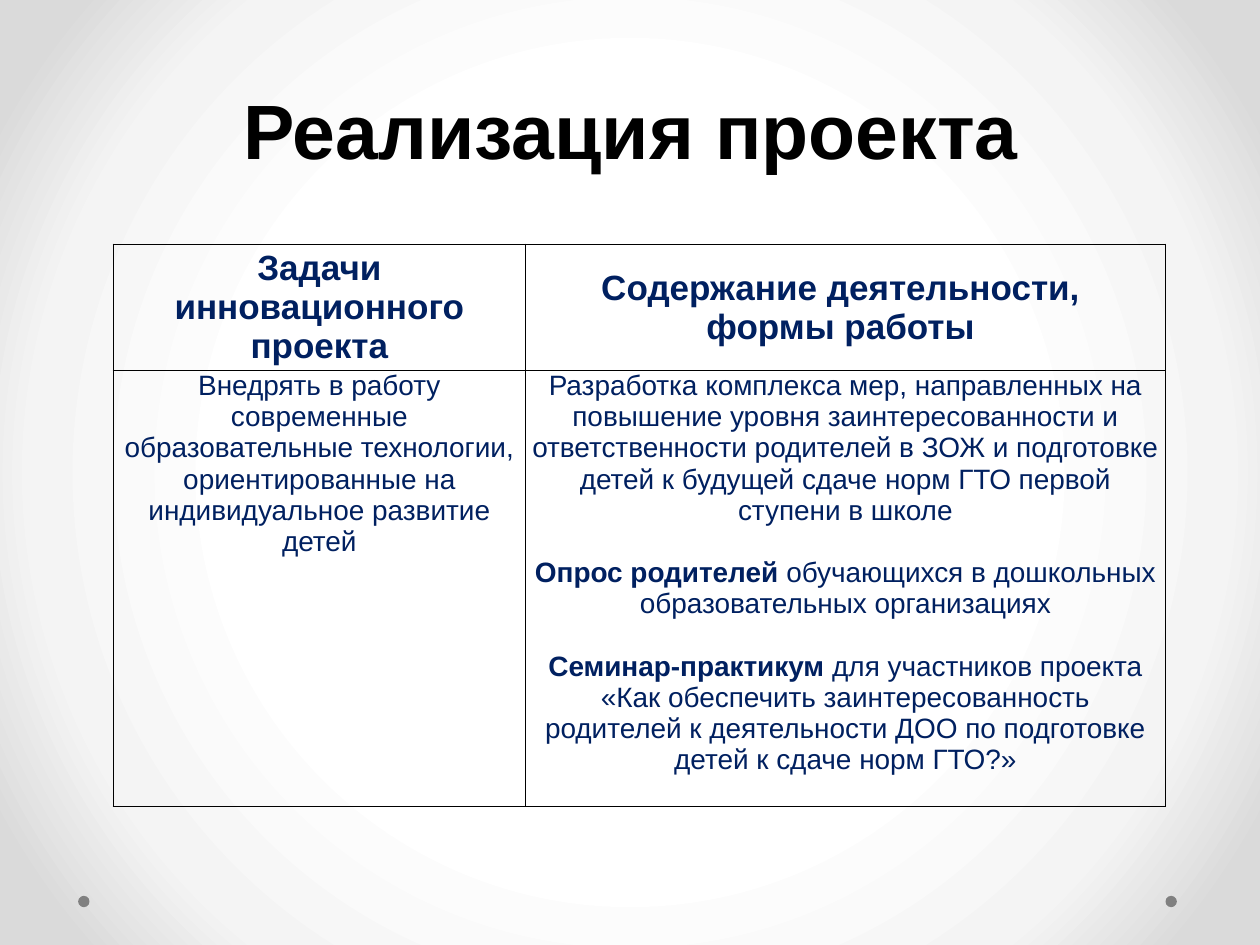
from lxml import etree
from pptx import Presentation
from pptx.dml.color import RGBColor
from pptx.enum import shapes, text
from pptx.oxml import parse_xml
from pptx.oxml.ns import nsdecls, qn
from pptx.util import Inches, Pt

BLACK = RGBColor(0x00, 0x00, 0x00)
NAVY = RGBColor(0x00, 0x20, 0x60)
GREY = RGBColor(0x80, 0x80, 0x80)
GLOW_STOPS = [
    (50, RGBColor(0xFF, 0xFF, 0xFF)),
    (76, RGBColor(0xF4, 0xF4, 0xF4)),
    (92, RGBColor(0xDA, 0xDA, 0xDA)),
]
FONT = "Arial"
COLUMN_WIDTHS = [3.27, 5.08]
ROW_HEIGHTS = [0.61, 3.46]  # the header row grows to fit its text

# Each cell is a list of paragraphs, each paragraph a list of (text, bold) runs.
HEADER = [
    [[("Задачи инновационного проекта", True)]],
    [[("Содержание деятельности, ", True)], [("формы работы ", True)]],
]
BODY = [
    [[("Внедрять в работу современные образовательные технологии, "
       "ориентированные на индивидуальное развитие детей", False)]],
    [
        [("Разработка комплекса мер, направленных на повышение уровня "
          "заинтересованности и ответственности родителей в ЗОЖ и подготовке "
          "детей к будущей сдаче норм ГТО первой ступени в школе", False)],
        [("Опрос родителей ", True),
         ("обучающихся в дошкольных образовательных организациях", False)],
        [("Семинар-практикум ", True),
         ("для участников проекта «Как обеспечить заинтересованность родителей "
          "к деятельности ДОО по подготовке детей к сдаче норм ГТО?»", False)],
    ],
]


def set_radial_background(slide):
    slide.background.fill.solid()
    solid = next(slide.element.iter(qn("a:solidFill")))
    stops = "".join(
        f'<a:gs pos="{percent * 1000}"><a:srgbClr val="{color}"/></a:gs>'
        for percent, color in GLOW_STOPS
    )
    gradient = parse_xml(
        f'<a:gradFill rotWithShape="1" {nsdecls("a")}><a:gsLst>{stops}</a:gsLst>'
        '<a:path path="circle"><a:fillToRect l="50000" t="50000" r="50000" b="50000"/>'
        "</a:path></a:gradFill>"
    )
    solid.getparent().replace(solid, gradient)


def add_dot(slide, left):
    dot = slide.shapes.add_shape(
        shapes.MSO_SHAPE.OVAL, Inches(left), Inches(7.11), Inches(0.09), Inches(0.09)
    )
    dot.shadow.inherit = False
    dot.fill.solid()
    dot.fill.fore_color.rgb = GREY
    dot.line.fill.background()


def add_run(paragraph, words, size, bold, color):
    run = paragraph.add_run()
    run.text = words
    run.font.name = FONT
    run.font.size = Pt(size)
    run.font.bold = bold
    run.font.color.rgb = color


def add_title(slide, words):
    box = slide.shapes.add_textbox(Inches(0.51), Inches(0.21), Inches(9), Inches(1.23))
    frame = box.text_frame
    frame.word_wrap = True
    frame.vertical_anchor = text.MSO_ANCHOR.BOTTOM
    paragraph = frame.paragraphs[0]
    paragraph.alignment = text.PP_ALIGN.CENTER
    paragraph.line_spacing = Pt(58)
    add_run(paragraph, words, 44, True, BLACK)


def set_borders(cell):
    properties = cell._tc.get_or_add_tcPr()
    for side in ("lnL", "lnR", "lnT", "lnB"):
        line = etree.SubElement(properties, qn(f"a:{side}"), w=str(Pt(1)))
        fill = etree.SubElement(line, qn("a:solidFill"))
        etree.SubElement(fill, qn("a:srgbClr"), val=str(BLACK))


def fill_cell(cell, paragraphs, size, anchor, gap):
    """Write centred paragraphs, with gap points between them."""
    set_borders(cell)
    cell.fill.background()
    cell.vertical_anchor = anchor
    cell.margin_left = cell.margin_right = Inches(0.03)
    cell.margin_top = cell.margin_bottom = 0
    frame = cell.text_frame
    for index, runs in enumerate(paragraphs):
        paragraph = frame.add_paragraph() if index else frame.paragraphs[0]
        paragraph.alignment = text.PP_ALIGN.CENTER
        paragraph.space_before = Pt(gap if index else 0)
        for words, bold in runs:
            add_run(paragraph, words, size, bold, NAVY)


def add_task_table(slide):
    table = slide.shapes.add_table(
        len(ROW_HEIGHTS), len(COLUMN_WIDTHS), Inches(0.9), Inches(1.94),
        Inches(sum(COLUMN_WIDTHS)), Inches(sum(ROW_HEIGHTS)),
    ).table
    table.first_row = table.horz_banding = False
    for column, width in zip(table.columns, COLUMN_WIDTHS):
        column.width = Inches(width)
    for row, height in zip(table.rows, ROW_HEIGHTS):
        row.height = Inches(height)
    for column, (heading, body) in enumerate(zip(HEADER, BODY)):
        fill_cell(table.cell(0, column), heading, 20, text.MSO_ANCHOR.MIDDLE, 0)
        fill_cell(table.cell(1, column), body, 16, text.MSO_ANCHOR.TOP, 18)


def main():
    presentation = Presentation()
    presentation.slide_width = Inches(10)
    presentation.slide_height = Inches(7.5)
    slide = presentation.slides.add_slide(presentation.slide_layouts[6])
    set_radial_background(slide)
    for left in (9.25, 0.62):
        add_dot(slide, left)
    add_title(slide, "Реализация проекта")
    add_task_table(slide)
    presentation.save("out.pptx")


if __name__ == "__main__":
    main()
